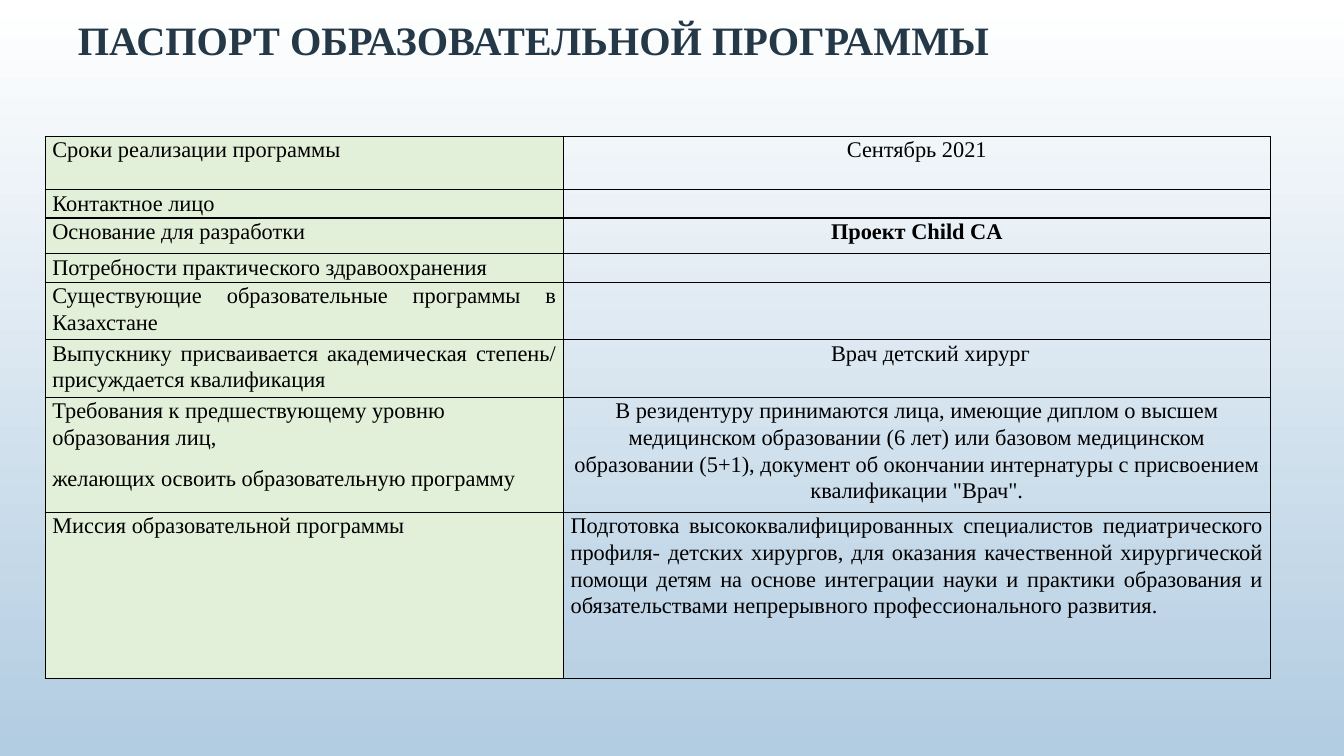
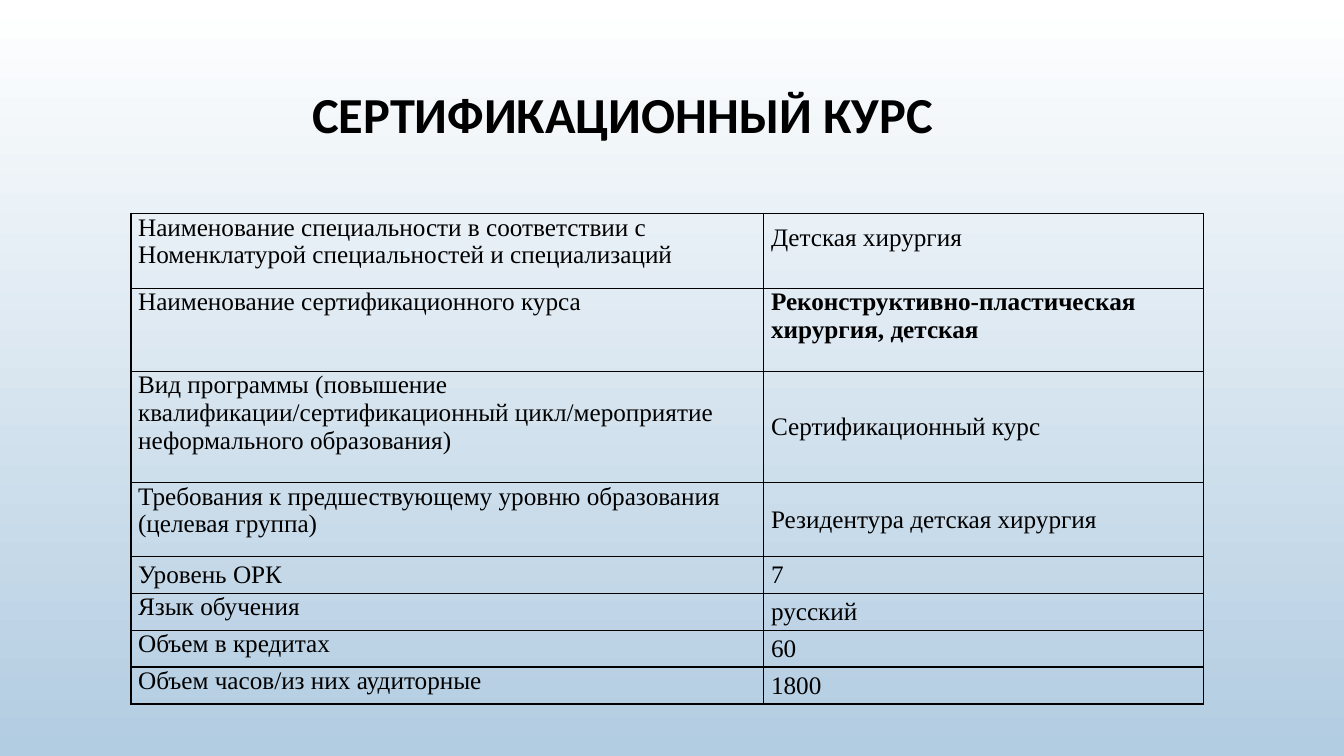
from lxml import etree
from pptx import Presentation
from pptx.dml.color import RGBColor
from pptx.enum.text import MSO_ANCHOR, PP_ALIGN
from pptx.oxml.ns import qn
from pptx.util import Cm, Pt

TOP, MID = MSO_ANCHOR.TOP, MSO_ANCHOR.MIDDLE
LEFT, CENTER, FULL = PP_ALIGN.LEFT, PP_ALIGN.CENTER, PP_ALIGN.JUSTIFY
SERIF, SANS = "Times New Roman", "Calibri"
COLORS = {"sky": "FFFFFF", "haze": "B2CCE1", "navy": "253848",
          "ink": "000000", "green": "E2EFD9"}


def rgb(name):
    return RGBColor.from_string(COLORS[name])


def write(frame, words, size=16, font=SERIF, color="ink", bold=False,
          align=LEFT, space=1.0, gap=0, indent=0, anchor=TOP):
    """Fill a frame; each line of words becomes a paragraph."""
    frame.word_wrap = True
    frame.vertical_anchor = anchor
    for i, line in enumerate(words.split("\n")):
        para = frame.add_paragraph() if i else frame.paragraphs[0]
        para.alignment, para.line_spacing = align, space
        if i:
            para.space_before = Pt(gap)
        if indent:
            para._p.get_or_add_pPr().set("indent", str(Cm(indent)))
        if line:
            run = para.add_run()
            run.text = line
            run.font.size, run.font.name, run.font.bold = Pt(size), font, bold
            run.font.color.rgb = rgb(color)
        else:
            # An empty line still sets the least height of its row
            para._p.get_or_add_endParaRPr().set("sz", str(size * 100))


def frame_cell(cell):
    props = cell._tc.get_or_add_tcPr()
    for side in ("lnL", "lnR", "lnT", "lnB"):
        line = etree.SubElement(props, qn("a:" + side), w=str(Pt(1)))
        fill = etree.SubElement(line, qn("a:solidFill"))
        etree.SubElement(fill, qn("a:srgbClr"), val=COLORS["ink"])


def add_title(slide, box, words, **form):
    shape = slide.shapes.add_textbox(*map(Cm, box))
    write(shape.text_frame, words, bold=True, align=CENTER, space=0.9,
          anchor=MID, **form)


def add_grid(slide, spot, widths, rows, forms, fills):
    """Rows hold a height and two cells: text, or text with its own format."""
    size = (sum(widths), sum(row[0] for row in rows))
    table = slide.shapes.add_table(len(rows), len(widths),
                                   *map(Cm, spot + size)).table
    table.first_row = table.horz_banding = False
    for col, width in zip(table.columns, widths):
        col.width = Cm(width)
    for r, (height, *items) in enumerate(rows):
        table.rows[r].height = Cm(height)
        for c, item in enumerate(items):
            words, own = (item, {}) if isinstance(item, str) else item
            form = {**forms[c], **own}
            cell = table.cell(r, c)
            cell.margin_left = cell.margin_right = Cm(0.18)
            cell.margin_top = 0
            cell.margin_bottom = Cm(form.pop("foot", 0))
            cell.vertical_anchor = form.pop("anchor", TOP)
            frame_cell(cell)
            if fills[c]:
                cell.fill.solid()
                cell.fill.fore_color.rgb = rgb(fills[c])
            else:
                cell.fill.background()
            write(cell.text_frame, words, **form)


def passport(slide):
    add_title(slide, (1.5, 0.15, 23.9, 1.83),
              "ПАСПОРТ ОБРАЗОВАТЕЛЬНОЙ ПРОГРАММЫ", size=28.8, color="navy")
    rows = [
        (1.34, "Сроки реализации программы", "Сентябрь 2021"),
        (0.67, "Контактное лицо", ""),
        (0.89, "Основание для разработки",
         ("Проект Child CA", {"bold": True})),
        (0.67, "Потребности практического здравоохранения", ""),
        (1.37, "Существующие образовательные программы в Казахстане", ""),
        (1.37, "Выпускнику присваивается академическая степень/ "
               "присуждается квалификация",
         ("Врач детский хирург", {"indent": 0.69})),
        (2.69, ("Требования к предшествующему уровню образования лиц,\n"
                "желающих освоить образовательную программу",
                {"align": LEFT, "gap": 10}),
         "В резидентуру принимаются лица, имеющие диплом о высшем "
         "медицинском образовании (6 лет) или базовом медицинском "
         "образовании (5+1), документ об окончании интернатуры с "
         "присвоением квалификации \"Врач\"."),
        (4.19, "Миссия образовательной программы",
         ("Подготовка высококвалифицированных специалистов "
          "педиатрического профиля- детских хирургов, для оказания "
          "качественной хирургической помощи детям на основе интеграции "
          "науки и практики образования и обязательствами непрерывного "
          "профессионального развития.", {"align": FULL})),
    ]
    forms = [{"align": align, "space": 1.07} for align in (FULL, CENTER)]
    add_grid(slide, (1.14, 3.43), (13.06, 17.81), rows, forms,
             ("green", None))


def course(slide):
    add_title(slide, (1.88, 1.7, 27.64, 2.49), "СЕРТИФИКАЦИОННЫЙ КУРС",
              size=36, font=SANS)
    rows = [
        (1.88, "Наименование специальности в соответствии с "
               "Номенклатурой специальностей и специализаций",
         ("Детская хирургия", {"foot": 0.66})),
        (2.1, "Наименование сертификационного курса",
         ("Реконструктивно-пластическая хирургия, детская",
          {"bold": True, "anchor": TOP})),
        (2.8, "Вид программы (повышение квалификации/сертификационный "
              "цикл/мероприятие неформального образования)",
         "Сертификационный курс"),
        (1.86, "Требования к предшествующему уровню образования "
               "(целевая группа)", "Резидентура детская хирургия"),
        (0.93, ("Уровень ОРК", {"align": FULL, "anchor": MID}), "7"),
        (0.93, "Язык обучения", "русский"),
        (0.93, "Объем в кредитах", "60"),
        (0.93, "Объем часов/из них аудиторные", "1800"),
    ]
    forms = [{"size": 18, "anchor": anchor} for anchor in (TOP, MID)]
    add_grid(slide, (3.3, 5.38), (15.95, 11.07), rows, forms, (None, None))


def shade(master):
    fill = master.background.fill
    fill.gradient()
    fill.gradient_angle = 270
    for stop, name in zip(fill.gradient_stops, ("sky", "haze")):
        stop.color.rgb = rgb(name)


def main():
    deck = Presentation()
    deck.slide_width, deck.slide_height = Cm(33.87), Cm(19.05)
    shade(deck.slide_master)
    for build in (passport, course):
        build(deck.slides.add_slide(deck.slide_layouts[6]))
    deck.save("out.pptx")


if __name__ == "__main__":
    main()
